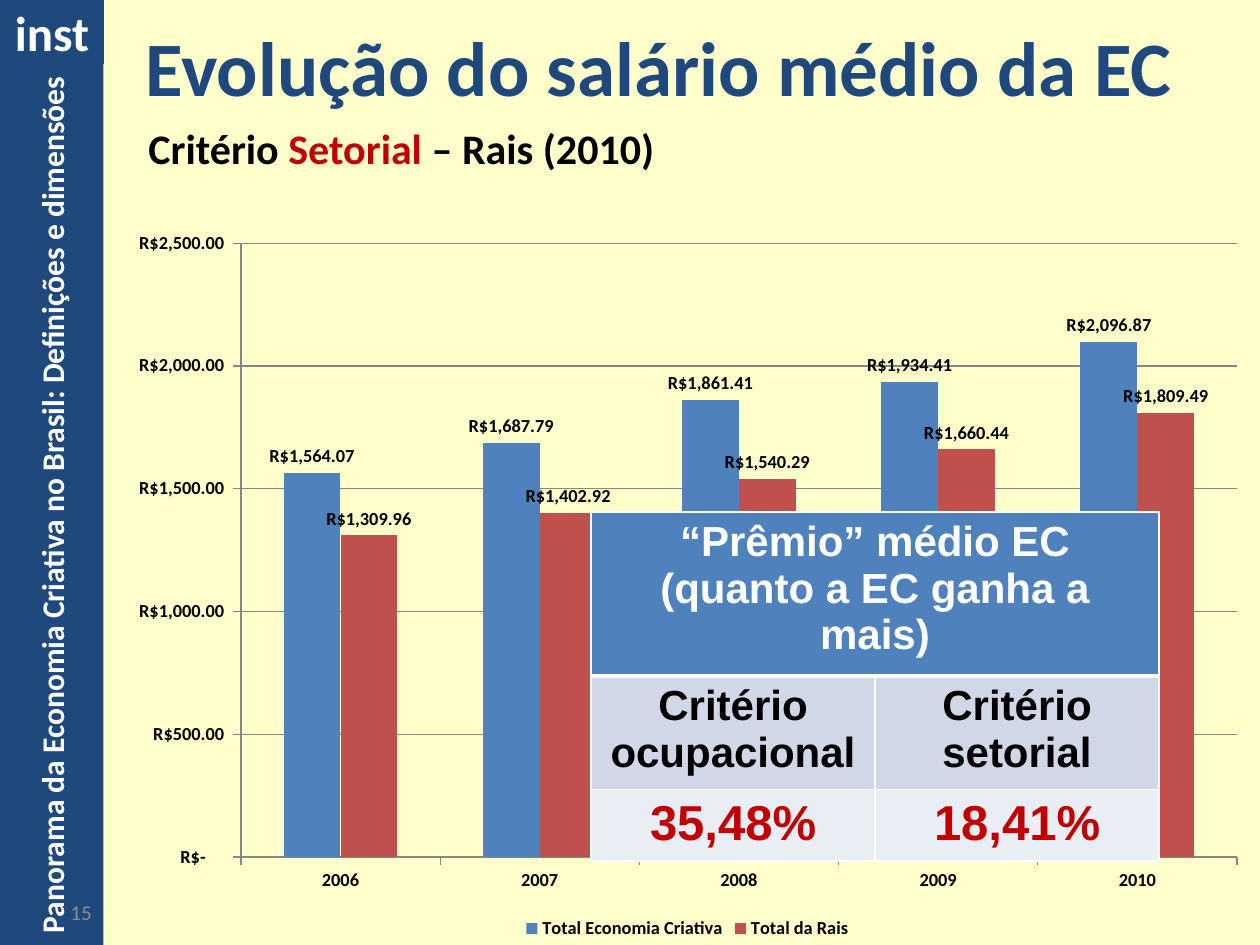
import pptx
import pptx.util
import pptx.dml.color
import pptx.chart.data
import pptx.enum.chart
import pptx.enum.shapes
import pptx.enum.text
import pptx.oxml
import pptx.oxml.ns

SCALE = 914400 / 126
NAVY, BLUE, RED, WHITE = "1F497D", "4F81BD", "C00000", "FFFFFF"
MONEY = r'_("R$"* #,##0.00_);_("R$"* \(#,##0.00\);_("R$"* "-"??_);_(@_)'
ALIGN = pptx.enum.text.PP_ALIGN
MIDDLE = pptx.enum.text.MSO_ANCHOR.MIDDLE


def px(num):
    return pptx.util.Emu(round(num * SCALE))


def color(code):
    return pptx.dml.color.RGBColor.from_string(code)


def paint(fill, code):
    fill.solid()
    fill.fore_color.rgb = color(code)


def style(font, size, code="000000", bold=True, face="Calibri"):
    font.size, font.bold, font.name = pptx.util.Pt(size), bold, face
    font.color.rgb = color(code)


def write(frame, text, align=ALIGN.LEFT, code="000000", **look):
    """Fill a frame with one paragraph; text is a string or (string, colour) runs."""
    para = frame.paragraphs[0]
    para.alignment = align
    for part, tint in [(text, code)] if isinstance(text, str) else text:
        run = para.add_run()
        run.text = part
        style(run.font, code=tint, **look)


def parse(tag, body):
    return pptx.oxml.parse_xml(f"<{tag} {pptx.oxml.ns.nsdecls(tag[0])}{body}")


def edge(cell, **widths):
    """Draw white cell borders, widths in points keyed by side."""
    props = cell._tc.get_or_add_tcPr()
    for spot, side in enumerate("LRTB"):
        width = pptx.util.Pt(widths.get(side, 1))
        line = parse(f"a:ln{side}", f' w="{width}"><a:solidFill><a:srgbClr val="{WHITE}"/>'
                     f"</a:solidFill></a:ln{side}>")
        props.insert(spot, line)


class Deck:
    def __init__(self, wide, high, back):
        self.show = pptx.Presentation()
        self.show.slide_width, self.show.slide_height = px(wide), px(high)
        self.slide = self.show.slides.add_slide(self.show.slide_layouts[6])
        paint(self.slide.background.fill, back)

    def text(self, box, text, wrap=True, anchor=MIDDLE, **look):
        frame = self.slide.shapes.add_textbox(*map(px, box)).text_frame
        frame.word_wrap, frame.vertical_anchor = wrap, anchor
        write(frame, text, **look)

    def block(self, box, text, fill, turn=0, wrap=True, **look):
        kind = pptx.enum.shapes.MSO_SHAPE.RECTANGLE
        shape = self.slide.shapes.add_shape(kind, *map(px, box))
        shape.shadow.inherit = False
        shape.rotation = turn
        paint(shape.fill, fill)
        shape.line.fill.background()
        shape.text_frame.word_wrap = wrap
        shape.text_frame.vertical_anchor = MIDDLE
        write(shape.text_frame, text, **look)

    def chart(self, box, cats, series, plot):
        """Draw clustered columns; series holds (name, colour, values)."""
        data = pptx.chart.data.CategoryChartData(number_format=MONEY)
        data.categories = cats
        for name, _, vals in series:
            data.add_series(name, vals)
        kind = pptx.enum.chart.XL_CHART_TYPE.COLUMN_CLUSTERED
        chart = self.slide.shapes.add_chart(kind, *map(px, box), data).chart
        style(chart.font, 10.5)
        chart.has_title = False
        chart.has_legend = True
        chart.legend.position = pptx.enum.chart.XL_LEGEND_POSITION.BOTTOM
        chart.legend.include_in_layout = False

        group = chart.plots[0]
        group.gap_width, group.overlap, group.vary_by_categories = 150, 0, False
        for item, (_, code, _) in zip(group.series, series):
            paint(item.format.fill, code)
            item.invert_if_negative = False
            labels = item.data_labels
            labels.show_value = True
            labels.number_format, labels.number_format_is_linked = MONEY, False
            labels.position = pptx.enum.chart.XL_LABEL_POSITION.OUTSIDE_END
            style(labels.font, 10.5)

        value = chart.value_axis
        value.minimum_scale, value.maximum_scale, value.major_unit = 0, 2500, 500
        value.tick_labels.number_format = MONEY
        value.tick_labels.number_format_is_linked = False
        value.has_major_gridlines = True
        for axis in (value, chart.category_axis):
            axis.major_tick_mark = pptx.enum.chart.XL_TICK_MARK.OUTSIDE
            axis.format.line.color.rgb = color("868686")
        value.major_gridlines.format.line.color.rgb = color("868686")

        area = chart._chartSpace.chart.plotArea
        for old in area.findall(pptx.oxml.ns.qn("c:layout")):
            area.remove(old)
        spots = "".join(f'<c:{key} val="{num}"/>' for key, num in zip("xywh", plot))
        area.insert(0, parse("c:layout", '><c:manualLayout><c:layoutTarget val="inner"/>'
                             '<c:xMode val="edge"/><c:yMode val="edge"/>'
                             f"{spots}</c:manualLayout></c:layout>"))

    def table(self, box, highs, rows):
        """Draw a table whose first row is one merged heading."""
        wide = len(rows[-1][0])
        table = self.slide.shapes.add_table(len(rows), wide, *map(px, box)).table
        for row, high in zip(table.rows, highs):
            row.height = px(high)
        table.cell(0, 0).merge(table.cell(0, wide - 1))
        for r, (words, fill, size, code) in enumerate(rows):
            for c in range(wide):
                cell = table.cell(r, c)
                paint(cell.fill, fill)
                edge(cell, T=3 if r == 1 else 1, B=3 if r == 0 else 1)
                if c < len(words):
                    write(cell.text_frame, words[c], align=ALIGN.CENTER,
                          size=size, code=code, face="Arial")


def main():
    deck = Deck(1260, 945, "FFFFCC")
    deck.block((-421, 421, 945, 104),
               "Panorama da Economia Criativa no Brasil: Definições e dimensões",
               NAVY, turn=270, size=18, code=WHITE)
    deck.block((0, 0, 104, 64), "inst", NAVY, wrap=False,
               align=ALIGN.CENTER, size=28, code=WHITE)
    deck.text((104, -4, 1111, 139), "Evolução do salário médio da EC",
              align=ALIGN.CENTER, size=44, code=NAVY)
    deck.text((0, 880, 104, 65), "15", align=ALIGN.RIGHT,
              size=12, code="8C8C8C", bold=False)
    deck.chart((115, 214, 1145, 731), ["2006", "2007", "2008", "2009", "2010"], [
        ("Total Economia Criativa", BLUE, (1564.07, 1687.79, 1861.41, 1934.41, 2096.87)),
        ("Total da Rais", "C0504D", (1309.96, 1402.92, 1540.29, 1660.44, 1809.49)),
    ], plot=(0.11, 0.04, 0.87, 0.84))
    deck.text((136, 116, 535, 64),
              [("Critério ", "000000"), ("Setorial", RED), (" – Rais (2010)", "000000")],
              wrap=False, anchor=pptx.enum.text.MSO_ANCHOR.TOP, size=24)
    deck.table((591, 512, 568, 348), (164, 113, 71), [
        (["“Prêmio” médio EC (quanto a EC ganha a mais)"], BLUE, 24, WHITE),
        (["Critério ocupacional", "Critério setorial"], "D0D8E8", 24, "000000"),
        (["35,48%", "18,41%"], "E9EDF4", 28, RED),
    ])
    deck.show.save("out.pptx")


if __name__ == "__main__":
    main()
